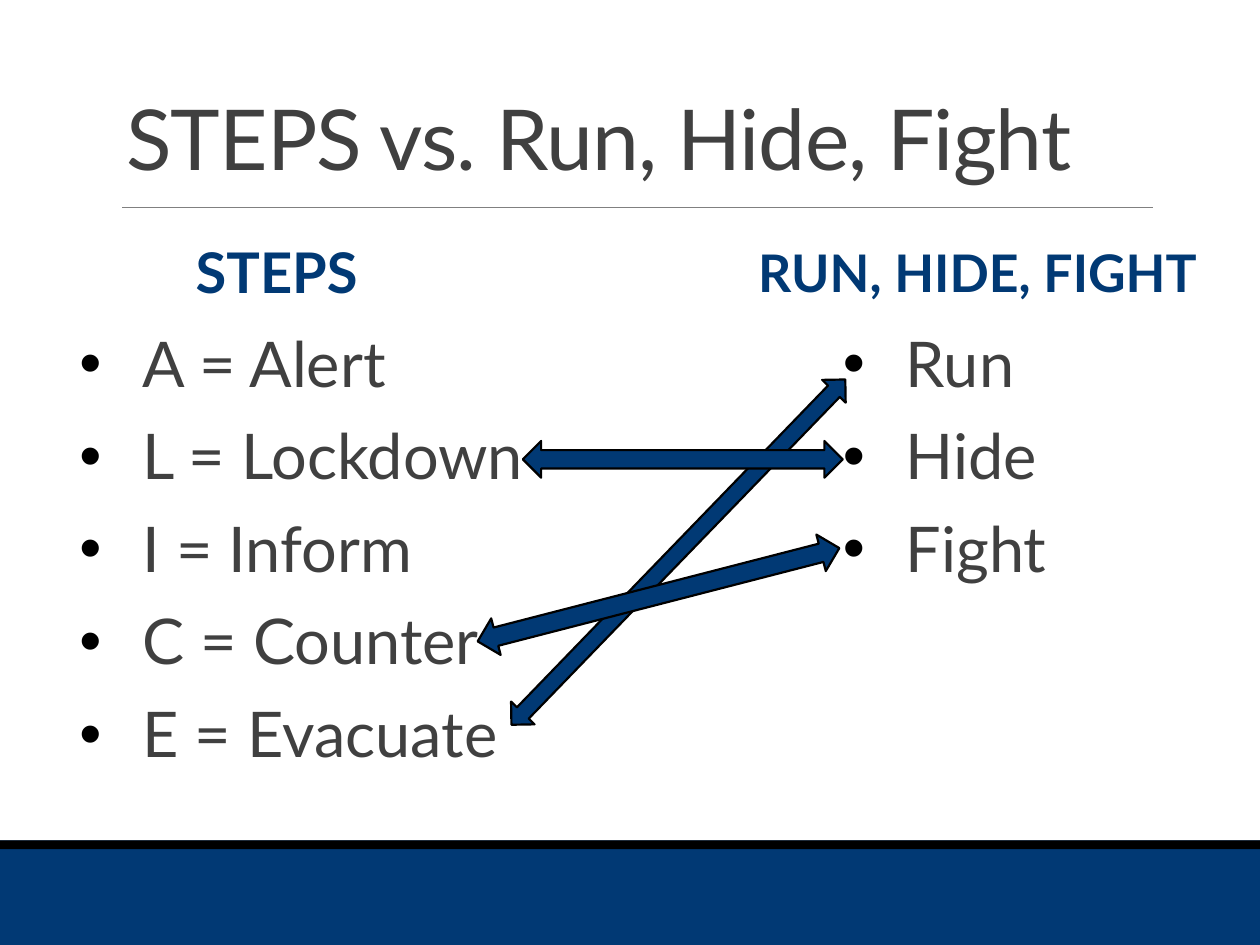
from math import atan2, degrees, hypot

from lxml.etree import SubElement
from pptx import Presentation
from pptx.dml.color import RGBColor
from pptx.enum.shapes import MSO_CONNECTOR, MSO_SHAPE
from pptx.enum.text import MSO_ANCHOR as Anchor, MSO_AUTO_SIZE, PP_ALIGN as Align
from pptx.oxml.ns import qn
from pptx.util import Cm, Pt

# Content: boxes are left, top, width, height in cm
TITLE = ("STEPS vs. Run, Hide, Fight", (2.29, 0.79, 20.96, 3.12))
COLUMNS = [
    {"heading": "STEPS", "size": 32, "align": Align.CENTER,
     "heading_box": (2.29, 4.52, 6.58, 2.06),
     "items": ["A = Alert", "L = Lockdown", "I = Inform", "C = Counter", "E = Evacuate"],
     "list_box": (1.6, 6.58, 10.29, 9.73)},
    {"heading": "RUN, HIDE, FIGHT", "size": 29.6, "align": Align.RIGHT,
     "heading_box": (14.1, 4.52, 10.29, 2.06),
     "items": ["Run", "Hide", "Fight"],
     "list_box": (16.99, 6.58, 6.25, 9.73)},
]
# Start point, end point and thickness of each arrow in cm
ARROWS = [
    ((10.31, 14.61), (17.04, 7.65), 0.66),  # Evacuate - Run
    ((10.54, 9.26), (16.99, 9.26), 0.74),   # Lockdown - Hide
    ((9.63, 12.93), (16.92, 11.05), 0.76),  # Counter - Fight
]
THEME = {
    "font": "Lato", "title_size": 48, "list_size": 36,
    "navy": RGBColor(0x01, 0x39, 0x74), "black": RGBColor(0, 0, 0),
    "text": RGBColor(0x40, 0x40, 0x40), "rule": RGBColor(0x80, 0x80, 0x80),
}


def place(shape, box):
    shape.left, shape.top, shape.width, shape.height = map(Cm, box)


def prepare(placeholder, box, text, anchor):
    place(placeholder, box)
    frame = placeholder.text_frame
    frame.text = text
    frame.word_wrap = True
    frame.auto_size = MSO_AUTO_SIZE.NONE
    frame.vertical_anchor = anchor
    return frame


def style(paragraph, size, color, align=Align.LEFT, bold=False, spacing=0.9):
    paragraph.alignment = align
    paragraph.line_spacing = spacing
    for run in paragraph.runs:
        run.font.name = THEME["font"]
        run.font.size = Pt(size)
        run.font.bold = bold
        run.font.color.rgb = color


def add_bullet(paragraph):
    properties = paragraph._p.get_or_add_pPr()
    properties.set("marL", str(Cm(1.27)))
    properties.set("indent", str(-Cm(1.27)))
    color = SubElement(properties, qn("a:buClr"))
    SubElement(color, qn("a:srgbClr"), val=str(THEME["black"]))
    SubElement(properties, qn("a:buFont"), typeface="Arial")
    SubElement(properties, qn("a:buChar"), char="•")


def add_filled(slide, kind, box, color):
    shape = slide.shapes.add_shape(kind, *map(Cm, box))
    shape.shadow.inherit = False
    shape.fill.solid()
    shape.fill.fore_color.rgb = color
    shape.line.fill.background()
    return shape


def add_arrow(slide, start, end, thickness):
    (x1, y1), (x2, y2) = start, end
    length = hypot(x2 - x1, y2 - y1)
    box = ((x1 + x2 - length) / 2, (y1 + y2 - thickness) / 2, length, thickness)
    arrow = add_filled(slide, MSO_SHAPE.LEFT_RIGHT_ARROW, box, THEME["navy"])
    arrow.rotation = degrees(atan2(y2 - y1, x2 - x1))
    arrow.line.color.rgb = THEME["black"]
    arrow.line.width = Pt(1.25)


def main():
    presentation = Presentation()
    presentation.slide_width, presentation.slide_height = Cm(25.4), Cm(19.05)
    slide = presentation.slides.add_slide(presentation.slide_layouts[4])  # Comparison

    # Footer band and title rule
    add_filled(slide, MSO_SHAPE.RECTANGLE, (0, 16.94, 25.4, 2.11), THEME["navy"])
    add_filled(slide, MSO_SHAPE.RECTANGLE, (0, 16.94, 25.4, 0.18), THEME["black"])
    rule = slide.shapes.add_connector(
        MSO_CONNECTOR.STRAIGHT, Cm(2.46), Cm(4.19), Cm(23.24), Cm(4.19))
    rule.line.color.rgb = THEME["rule"]
    rule.line.width = Pt(0.5)
    SubElement(rule._element.spPr, qn("a:effectLst"))

    # Title
    text, box = TITLE
    title = prepare(slide.shapes.title, box, text, Anchor.BOTTOM).paragraphs[0]
    style(title, THEME["title_size"], THEME["text"], spacing=0.85)
    title.runs[0].font._element.set("spc", "-50")

    # Headings and bulleted lists
    _, *bodies = slide.placeholders
    for column, heading, listing in zip(COLUMNS, bodies[::2], bodies[1::2]):
        frame = prepare(heading, column["heading_box"], column["heading"], Anchor.MIDDLE)
        frame.paragraphs[0].space_before = Pt(0)
        style(frame.paragraphs[0], column["size"], THEME["navy"], column["align"], bold=True)

        frame = prepare(listing, column["list_box"], "\n".join(column["items"]), Anchor.TOP)
        frame.margin_left = frame.margin_right = 0
        for index, paragraph in enumerate(frame.paragraphs):
            add_bullet(paragraph)
            style(paragraph, THEME["list_size"], THEME["text"])
            paragraph.space_before = Pt(12 if index else 0)
            paragraph.space_after = Pt(2)

    # Arrows linking the matching steps
    for arrow in ARROWS:
        add_arrow(slide, *arrow)

    presentation.save("out.pptx")


if __name__ == "__main__":
    main()
